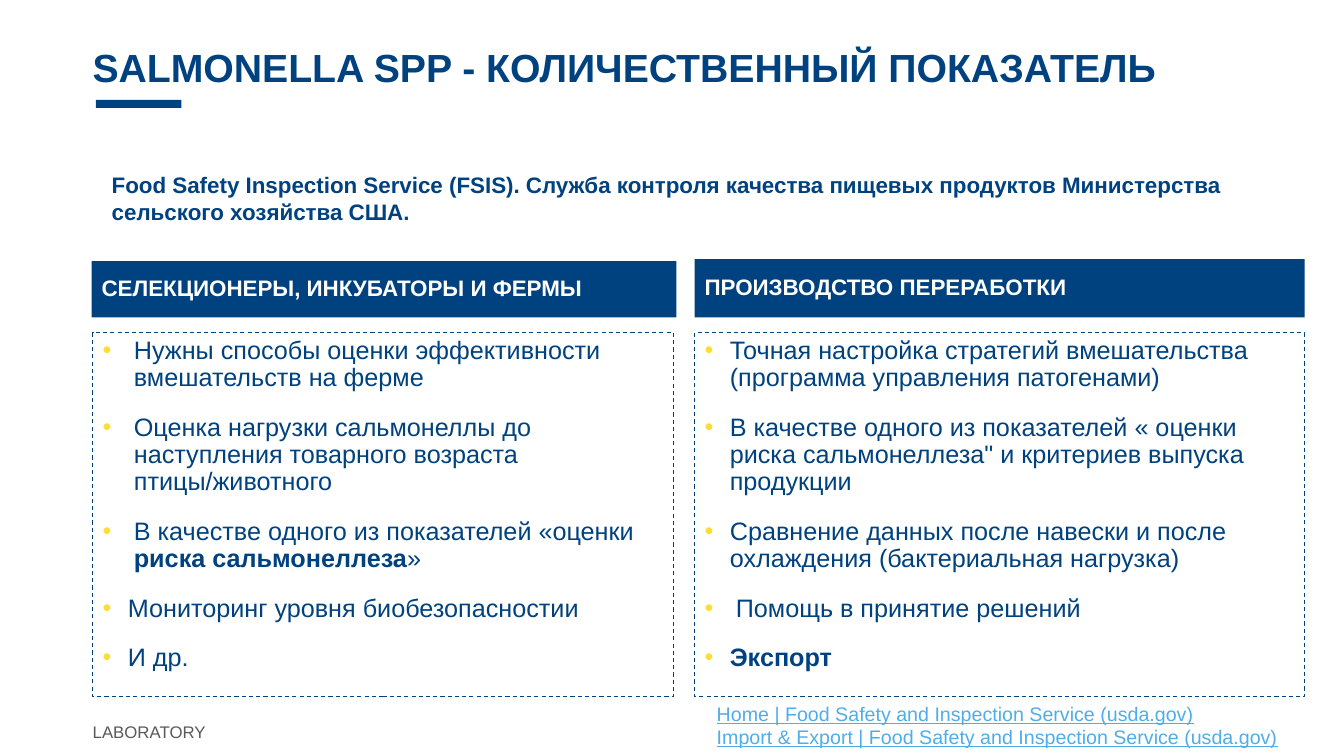
from lxml import etree
from pptx import Presentation, util as u
from pptx.dml.color import RGBColor
from pptx.enum import dml, shapes, text
from pptx.oxml.ns import qn

COLORS = {"navy": "00427F", "yellow": "FFDD37", "white": "FFFFFF",
          "grey": "595959", "link": "4FADEA"}
FONT = "Arial"
WIDE, NARROW = 0.31, 0.25  # bullet indents

# Each item: bullet indent, then (text, bold) runs
FARM = [
    (WIDE, [("Нужны способы оценки эффективности вмешательств на ферме", False)]),
    (WIDE, [("Оценка нагрузки сальмонеллы до наступления товарного возраста "
             "птицы/животного", False)]),
    (WIDE, [("В качестве одного из показателей «оценки ", False),
            ("риска сальмонеллеза", True), ("»", False)]),
    (NARROW, [("Мониторинг уровня биобезопасностии", False)]),
    (NARROW, [("И др.", False)]),
]
PROCESSING = [
    (NARROW, [("Точная настройка стратегий вмешательства "
               "(программа управления патогенами)", False)]),
    (NARROW, [("В качестве одного из показателей « оценки риска сальмонеллеза\" "
               "и критериев выпуска продукции", False)]),
    (NARROW, [("Сравнение данных после навески и после охлаждения "
               "(бактериальная нагрузка)", False)]),
    (WIDE, [("Помощь в принятие решений", False)]),
    (NARROW, [("Экспорт", True)]),
]
LINKS = ["Home | Food Safety and Inspection Service (usda.gov)",
         "Import & Export | Food Safety and Inspection Service (usda.gov)"]


def rgb(name):
    return RGBColor.from_string(COLORS[name])


def inches(box):
    return [u.Inches(v) for v in box]


def add_run(p, content, size, color, bold=False, underline=None):
    r = p.add_run()
    r.text = content
    f = r.font
    f.name, f.size, f.bold, f.underline = FONT, u.Pt(size), bold, underline
    f.color.rgb = rgb(color)


def add_rect(s, box, fill=None):
    sp = s.shapes.add_shape(shapes.MSO_SHAPE.RECTANGLE, *inches(box))
    sp.shadow.inherit = False
    sp.line.fill.background()
    if fill:
        sp.fill.solid()
        sp.fill.fore_color.rgb = rgb(fill)
    else:
        sp.fill.background()
    return sp


def set_frame(sp, anchor=text.MSO_ANCHOR.TOP):
    tf = sp.text_frame
    tf.word_wrap = True
    tf.vertical_anchor = anchor
    return tf


def add_label(s, box, lines, size, color, bold=False, underline=None,
              anchor=text.MSO_ANCHOR.TOP, spacing=None, margin=None):
    tf = set_frame(s.shapes.add_textbox(*inches(box)), anchor)
    if margin is not None:
        tf.margin_left = tf.margin_right = u.Inches(margin)
        tf.margin_top = tf.margin_bottom = u.Inches(margin)
    for i, line in enumerate(lines):
        p = tf.add_paragraph() if i else tf.paragraphs[0]
        p.line_spacing = spacing
        add_run(p, line, size, color, bold, underline)


def add_bullet(p, indent):
    pPr = p._p.get_or_add_pPr()
    pPr.set("marL", str(u.Inches(indent)))
    pPr.set("indent", str(-u.Inches(indent)))
    color = etree.SubElement(pPr, qn("a:buClr"))
    etree.SubElement(color, qn("a:srgbClr"), val=COLORS["yellow"])
    etree.SubElement(pPr, qn("a:buFont"), typeface=FONT)
    etree.SubElement(pPr, qn("a:buChar"), char="•")


def add_header(s, box, heading):
    tf = set_frame(add_rect(s, box, "navy"), text.MSO_ANCHOR.MIDDLE)
    p = tf.paragraphs[0]
    p.alignment = text.PP_ALIGN.LEFT
    p.line_spacing = 0.9
    p.space_after = u.Pt(6)
    add_run(p, heading, 16, "white", bold=True)


def add_list(s, box, items):
    sp = add_rect(s, box)
    sp.line.color.rgb = rgb("navy")
    sp.line.width = u.Pt(0.75)
    sp.line.dash_style = dml.MSO_LINE.DASH
    tf = set_frame(sp)
    for i, (indent, runs) in enumerate(items):
        p = tf.add_paragraph() if i else tf.paragraphs[0]
        add_bullet(p, indent)
        p.alignment = text.PP_ALIGN.LEFT
        p.line_spacing = 0.9
        p.space_before = u.Pt(10 if i else 0)
        p.space_after = u.Pt(6)
        for content, bold in runs:
            add_run(p, content, 18, "navy", bold)


def add_title(s, box):
    left, top, width, height = box
    add_label(s, box, ["SALMONELLA SPP - КОЛИЧЕСТВЕННЫЙ ПОКАЗАТЕЛЬ"], 28, "navy",
              bold=True, anchor=text.MSO_ANCHOR.MIDDLE, spacing=0.9)
    # Accent bar below the title
    add_rect(s, (left + 0.13, top + 0.66, 0.85, 0.08), "navy")


def main():
    prs = Presentation()
    prs.slide_width, prs.slide_height = inches((13.33, 7.5))
    s = prs.slides.add_slide(prs.slide_layouts[6])

    # Title and introduction
    add_title(s, (0.82, 0.33, 11.83, 0.72))
    add_label(s, (1.01, 1.65, 11.52, 0.64),
              ["Food Safety Inspection Service (FSIS). Служба контроля качества "
               "пищевых продуктов Министерства сельского хозяйства США."],
              16, "navy", bold=True)

    # Two columns
    add_header(s, (0.91, 2.59, 5.8, 0.56), "СЕЛЕКЦИОНЕРЫ, ИНКУБАТОРЫ И ФЕРМЫ")
    add_list(s, (0.92, 3.3, 5.76, 3.61), FARM)
    add_header(s, (6.89, 2.57, 6.05, 0.58), "ПРОИЗВОДСТВО ПЕРЕРАБОТКИ")
    add_list(s, (6.89, 3.3, 6.05, 3.61), PROCESSING)

    # Footer and sources
    add_label(s, (0.92, 7.16, 1.54, 0.2), ["LABORATORY"], 12, "grey", margin=0)
    add_label(s, (7.01, 6.91, 5.79, 0.57), LINKS, 14, "link", underline=True)

    prs.save("out.pptx")


if __name__ == "__main__":
    main()
